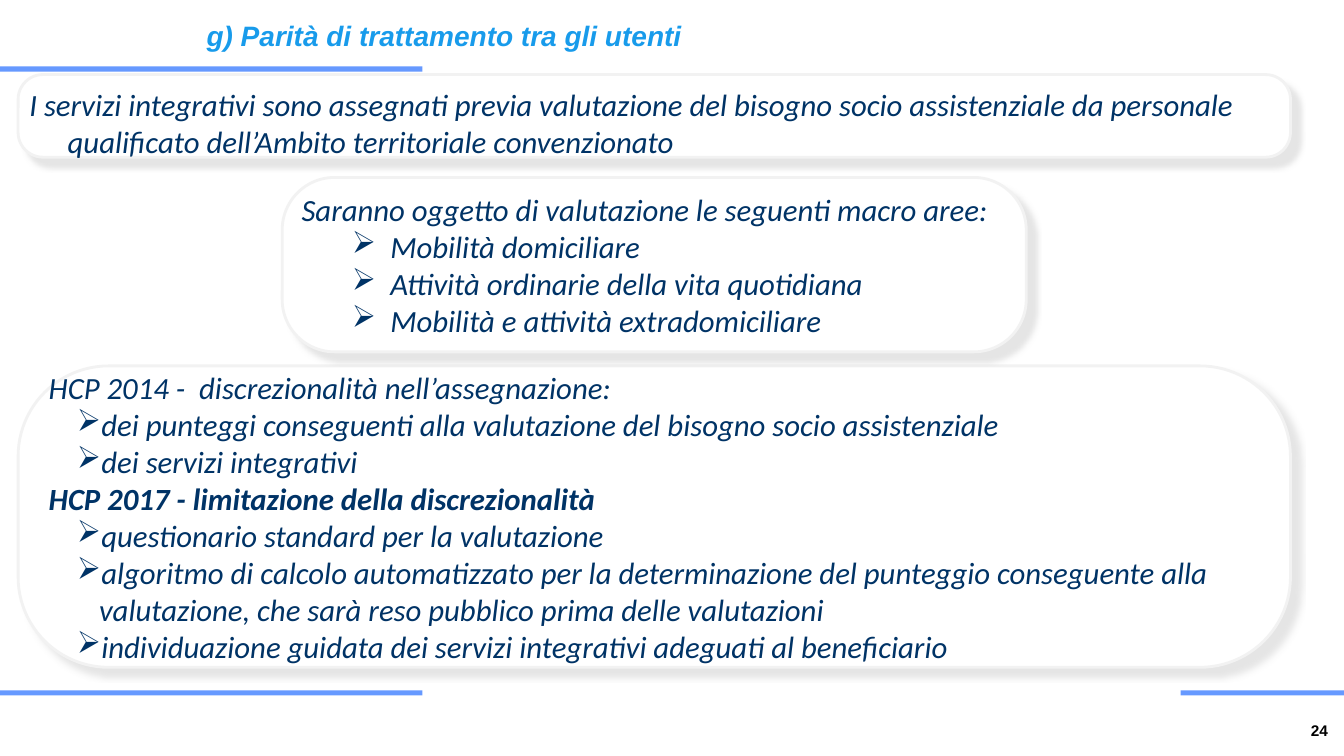
from dataclasses import dataclass

import lxml.etree
import pptx
import pptx.dml.color
import pptx.enum.shapes
import pptx.enum.text
import pptx.oxml
import pptx.oxml.ns
import pptx.util

COLORS = {"bar": "6699FF", "title": "189BEB", "number": "000000", "text": "003366",
          "panel": "FFFFFF", "border": "F2F2F2", "shadow": "BFBFBF"}
SHAPE = pptx.enum.shapes.MSO_SHAPE
ALIGN = pptx.enum.text.PP_ALIGN
ANCHOR = pptx.enum.text.MSO_ANCHOR
qn = pptx.oxml.ns.qn


@dataclass
class Area:
    """Position and size as percentages of the slide."""
    left: float
    top: float
    width: float
    height: float


@dataclass
class Line:
    text: str
    margin: float = 0.38
    indent: float = -0.38
    bullet: bool = False
    bold: bool = False


@dataclass
class Panel:
    area: Area
    anchor: ANCHOR
    lines: list[Line]


BAR_W, BAR_H = 31.43, 0.67
TOP_BAR, BOTTOM_BAR, RIGHT_BAR = 8.8, 91.33, 87.85
PANEL_X, PANEL_W = 1.35, 94.67

BARS = [
    Area(0, TOP_BAR, BAR_W, BAR_H),
    Area(0, BOTTOM_BAR, BAR_W, BAR_H),
    Area(RIGHT_BAR, BOTTOM_BAR, 100 - RIGHT_BAR, BAR_H),
]


def bullets(margin: float, indent: float, *texts: str) -> list[Line]:
    return [Line(text, margin, indent, bullet=True) for text in texts]


PANELS = [
    Panel(Area(PANEL_X, 9.87, PANEL_W, 10.93), ANCHOR.TOP, [
        Line("I servizi integrativi sono assegnati previa valutazione del bisogno socio "
             "assistenziale da personale qualificato dell’Ambito territoriale convenzionato"),
    ]),
    Panel(Area(PANEL_X, 48.4, PANEL_W, 39.87), ANCHOR.MIDDLE, [
        Line("HCP 2014 -  discrezionalità nell’assegnazione:"),
        *bullets(0.5, -0.22,
                 "dei punteggi conseguenti alla valutazione del bisogno socio assistenziale",
                 "dei servizi integrativi"),
        Line("HCP 2017 - limitazione della discrezionalità", bold=True),
        *bullets(0.5, -0.22,
                 "questionario standard per la valutazione",
                 "algoritmo di calcolo automatizzato per la determinazione del punteggio "
                 "conseguente alla valutazione, che sarà reso pubblico prima delle valutazioni",
                 "individuazione guidata dei servizi integrativi adeguati al beneficiario"),
    ]),
    Panel(Area(21, 23.47, 55.36, 23.07), ANCHOR.MIDDLE, [
        Line("Saranno oggetto di valutazione le seguenti macro aree:"),
        *bullets(0.88, -0.38,
                 "Mobilità domiciliare",
                 "Attività ordinarie della vita quotidiana",
                 "Mobilità e attività extradomiciliare"),
    ]),
]

prs = pptx.Presentation()
prs.slide_width = pptx.util.Inches(13.33)
prs.slide_height = pptx.util.Inches(7.5)
s = prs.slides.add_slide(prs.slide_layouts[6])


def rgb(name: str) -> pptx.dml.color.RGBColor:
    return pptx.dml.color.RGBColor.from_string(COLORS[name])


def box(area: Area) -> list[int]:
    w, h = prs.slide_width, prs.slide_height
    return [round(share * side / 100) for share, side in
            zip((area.left, area.top, area.width, area.height), (w, h, w, h))]


def write(p, text: str, *, size: float, font: str, color: str, bold: bool = False,
          italic: bool = False, align: ALIGN = ALIGN.LEFT) -> None:
    p.alignment = align
    r = p.add_run()
    r.text = text
    r.font.size, r.font.name = pptx.util.Pt(size), font
    r.font.bold, r.font.italic = bold, italic
    r.font.color.rgb = rgb(color)


def add_label(area: Area, text: str, **fmt) -> None:
    tf = s.shapes.add_textbox(*box(area)).text_frame
    tf.word_wrap = True
    write(tf.paragraphs[0], text, font="Arial", bold=True, **fmt)


def add_bar(area: Area) -> None:
    sp = s.shapes.add_shape(SHAPE.RECTANGLE, *box(area))
    sp.shadow.inherit = False
    sp.fill.solid()
    sp.fill.fore_color.rgb = rgb("bar")
    sp.line.fill.background()


def add_shadow(sp) -> None:
    sp.shadow.inherit = False
    effects = sp._element.spPr.find(qn("a:effectLst"))
    shadow = lxml.etree.SubElement(
        effects, qn("a:outerShdw"), blurRad=str(pptx.util.Pt(4)),
        dist=str(pptx.util.Pt(8)), dir=str(45 * 60000), algn="tl", rotWithShape="0")
    color = lxml.etree.SubElement(shadow, qn("a:srgbClr"), val=COLORS["shadow"])
    lxml.etree.SubElement(color, qn("a:alpha"), val="40000")


def set_indent(p, line: Line) -> None:
    pPr = p._p.get_or_add_pPr()
    pPr.set("marL", str(pptx.util.Inches(line.margin)))
    pPr.set("indent", str(pptx.util.Inches(line.indent)))
    if line.bullet:
        p.level = 1
        lxml.etree.SubElement(pPr, qn("a:buChar"), char="➢")


def add_panel(panel: Panel) -> None:
    sp = s.shapes.add_shape(SHAPE.ROUNDED_RECTANGLE, *box(panel.area))
    sp.adjustments[0] = 0.3
    sp.fill.solid()
    sp.fill.fore_color.rgb = rgb("panel")
    sp.line.color.rgb = rgb("border")
    sp.line.width = pptx.util.Pt(2)
    add_shadow(sp)
    tf = sp.text_frame
    tf.word_wrap = True
    tf.vertical_anchor = panel.anchor
    tf.margin_left = tf.margin_right = tf.margin_top = tf.margin_bottom = pptx.util.Inches(0.04)
    for i, line in enumerate(panel.lines):
        p = tf.add_paragraph() if i else tf.paragraphs[0]
        set_indent(p, line)
        write(p, line.text, size=22, font="Calibri", color="text", bold=line.bold, italic=True)


# Frame: bars, page number and title
for bar in BARS:
    add_bar(bar)
add_label(Area(90.62, 94.67, 8.93, 3.73), "24", size=11, color="number", align=ALIGN.RIGHT)
add_label(Area(14.63, 1.73, 58.89, 20), "g) Parità di trattamento tra gli utenti",
          size=20, color="title", italic=True)

# Content panels
for panel in PANELS:
    add_panel(panel)

prs.save("out.pptx")
